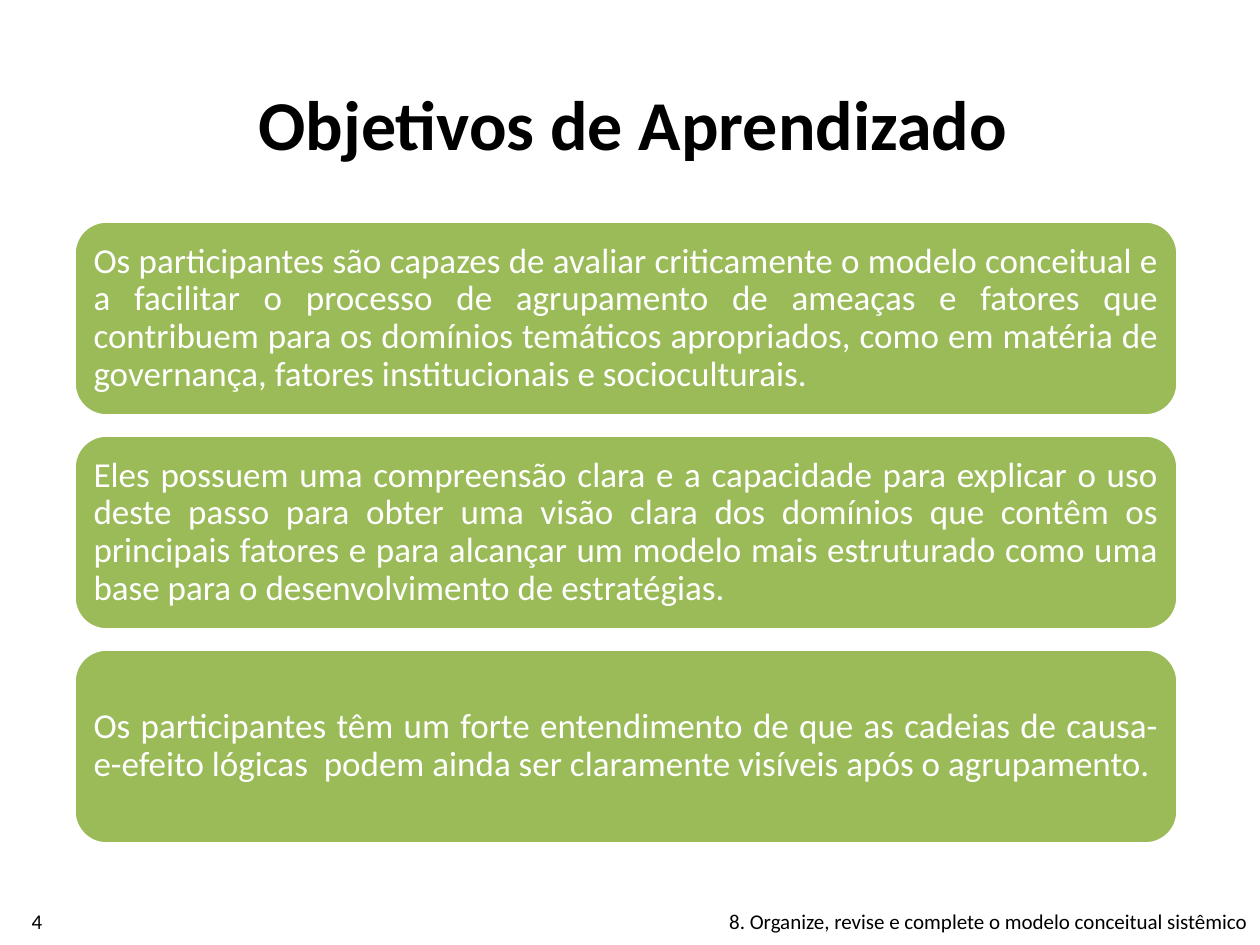
from pptx import Presentation
from pptx.dml.color import RGBColor as Rgb
from pptx.enum.shapes import MSO_SHAPE as Form
from pptx.enum.text import MSO_ANCHOR as Anchor, PP_ALIGN as Align
from pptx.util import Pt

SCALE = 914400 / 126
COLORS = {"green": "9BBB59", "white": "FFFFFF", "black": "000000"}
FONT = "Calibri"

GOALS = [
    "Os participantes são capazes de avaliar criticamente o modelo conceitual e a facilitar "
    "o processo de agrupamento de ameaças e fatores que contribuem para os domínios temáticos "
    "apropriados, como em matéria de governança, fatores institucionais e socioculturais.",
    "Eles possuem uma compreensão clara e a capacidade para explicar o uso deste passo para "
    "obter uma visão clara dos domínios que contêm os principais fatores e para alcançar um "
    "modelo mais estruturado como uma base para o desenvolvimento de estratégias.",
    "Os participantes têm um forte entendimento de que as cadeias de causa-e-efeito lógicas  "
    "podem ainda ser claramente visíveis após o agrupamento.",
]


def px(n):
    return round(n * SCALE)


def tint(name):
    return Rgb.from_string(COLORS[name])


class Page:
    def __init__(self, slide):
        self.slide = slide

    def fill_text(self, shape, text, size, align, color="black", bold=False):
        frame = shape.text_frame
        frame.word_wrap = True
        frame.vertical_anchor = Anchor.MIDDLE
        para = frame.paragraphs[0]
        para.alignment = align
        run = para.add_run()
        run.text = text
        font = run.font
        font.name, font.size, font.bold = FONT, Pt(size), bold
        font.color.rgb = tint(color)
        return para

    def label(self, box, text, size, align, bold=False):
        shape = self.slide.shapes.add_textbox(*map(px, box))
        self.fill_text(shape, text, size, align, bold=bold)

    def card(self, box, text):
        shape = self.slide.shapes.add_shape(Form.ROUNDED_RECTANGLE, *map(px, box))
        shape.shadow.inherit = False
        shape.fill.solid()
        shape.fill.fore_color.rgb = tint("green")
        shape.line.color.rgb = tint("white")
        shape.line.width = Pt(2)
        frame = shape.text_frame
        frame.margin_left = frame.margin_right = px(10)
        frame.margin_top = frame.margin_bottom = px(10)
        para = self.fill_text(shape, text, 20, Align.JUSTIFY, "white")
        para.line_spacing = 0.9


def main():
    deck = Presentation()
    deck.slide_width, deck.slide_height = px(1260), px(945)
    page = Page(deck.slides.add_slide(deck.slide_layouts[6]))

    page.label((179, 48, 908, 149), "Objetivos de Aprendizado", 40, Align.CENTER, True)

    top, high, gap = 221, 195, 19
    for row, goal in enumerate(GOALS):
        page.card((74, top + row * (high + gap), 1104, high), goal)

    page.label((0, 897, 74, 48), "4", 12, Align.CENTER)
    page.label((520, 897, 740, 48),
               "8. Organize, revise e complete o modelo conceitual sistêmico", 12, Align.RIGHT)
    deck.save("out.pptx")


if __name__ == "__main__":
    main()
